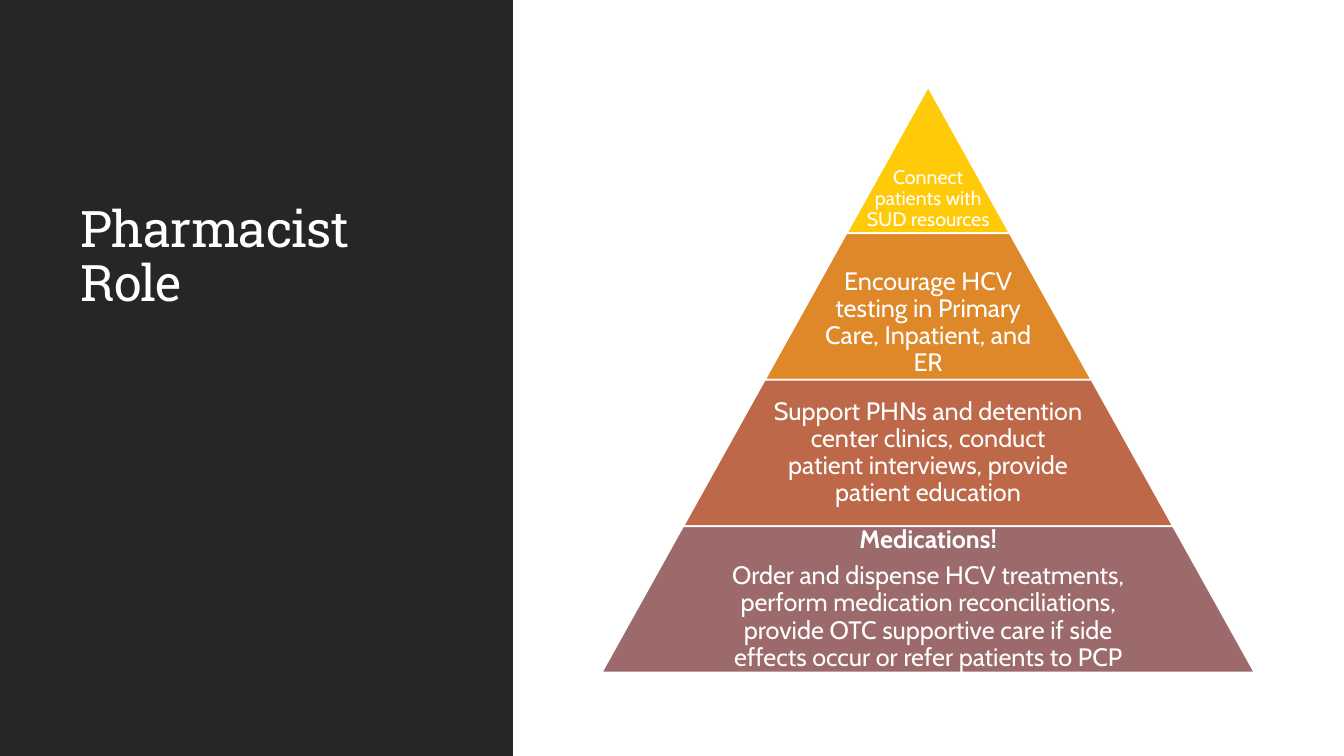
from pptx import Presentation
from pptx import util as u
from pptx.dml.color import RGBColor
from pptx.enum import shapes, text

Cm, Pt = u.Cm, u.Pt
COLORS = {
    "panel": "262626",
    "white": "FFFFFF",
    "yellow": "FFCA08",
    "orange": "DE8829",
    "rust": "BD6849",
    "mauve": "9C6A6A",
}
APEX_X, APEX_Y = 23.39, 2.19
TIER_HEIGHT, TIER_STEP = 3.69, 4.115
SLANT = 0.557
LABEL_SHARE = 0.65
BOTTOM, MIDDLE = text.MSO_ANCHOR.BOTTOM, text.MSO_ANCHOR.MIDDLE

# colour, paragraphs, text size, anchor, label share of tier width, side inset
TIERS = [
    ("yellow", ["Connect patients with SUD resources"], 14, BOTTOM, 1, 0.5),
    ("orange", ["Encourage HCV testing in Primary Care, Inpatient, and ER"],
     18, BOTTOM, LABEL_SHARE, 0.08),
    ("rust", ["Support PHNs and detention center clinics, conduct patient "
              "interviews, provide patient education"],
     18, MIDDLE, LABEL_SHARE, 0.08),
    ("mauve", ["Medications!",
               "Order and dispense HCV treatments, perform medication "
               "reconciliations, provide OTC supportive care if side effects "
               "occur or refer patients to PCP"],
     18, MIDDLE, LABEL_SHARE, 0.08),
]


def color(name):
    return RGBColor.from_string(COLORS[name])


def style_paragraph(para, font_name, size, bold=False):
    para.line_spacing = 0.9
    for span in para.runs:
        span.font.name = font_name
        span.font.size = Pt(size)
        span.font.bold = bold
        span.font.color.rgb = color("white")


def add_panel(page, width, height):
    """Place the dark side panel behind the title."""
    panel = page.shapes.add_shape(
        shapes.MSO_SHAPE.RECTANGLE, 0, 0, width, height)
    panel.shadow.inherit = False
    panel.fill.solid()
    panel.fill.fore_color.rgb = color("panel")
    panel.line.fill.background()
    page.shapes.title.element.addprevious(panel.element)


def format_title(title, wording):
    title.left, title.top = Cm(1.78), Cm(2.18)
    title.width, title.height = Cm(9.78), Cm(5.82)
    frame = title.text_frame
    frame.text = wording
    frame.word_wrap = True
    frame.auto_size = text.MSO_AUTO_SIZE.NONE
    frame.vertical_anchor = BOTTOM
    para = frame.paragraphs[0]
    para.alignment = text.PP_ALIGN.LEFT
    style_paragraph(para, "Roboto Slab", 36)
    for span in para.runs:
        span.font._element.set("spc", "-50")


def add_tier(page, top, width, fill):
    tier = page.shapes.add_shape(
        shapes.MSO_SHAPE.TRAPEZOID, Cm(APEX_X - width / 2), Cm(top),
        Cm(width), Cm(TIER_HEIGHT))
    tier.adjustments[0] = SLANT
    tier.shadow.inherit = False
    tier.fill.solid()
    tier.fill.fore_color.rgb = color(fill)
    tier.line.color.rgb = color("white")
    tier.line.width = Pt(1.25)


def add_label(page, top, width, paragraphs, size, anchor, inset):
    box = page.shapes.add_textbox(
        Cm(APEX_X - width / 2), Cm(top), Cm(width), Cm(TIER_HEIGHT))
    frame = box.text_frame
    frame.word_wrap = True
    frame.vertical_anchor = anchor
    frame.margin_left = frame.margin_right = Cm(inset)
    frame.margin_top = frame.margin_bottom = Cm(0.06)
    frame.text = "\n".join(paragraphs)
    for index, para in enumerate(frame.paragraphs):
        para.alignment = text.PP_ALIGN.CENTER
        para.space_after = Pt(size * 0.35)
        is_heading = index < len(paragraphs) - 1
        style_paragraph(para, "Cabin", size, is_heading)


def add_pyramid(page):
    for index, tier in enumerate(TIERS):
        fill, paragraphs, size, anchor, share, inset = tier
        top = APEX_Y + index * TIER_HEIGHT
        width = (index + 1) * TIER_STEP
        add_tier(page, top, width, fill)
        add_label(page, top, width * share, paragraphs, size, anchor, inset)


def main():
    deck = Presentation()
    deck.slide_width, deck.slide_height = Cm(33.87), Cm(19.05)
    page = deck.slides.add_slide(deck.slide_layouts.get_by_name("Title Only"))
    format_title(page.shapes.title, "Pharmacist Role")
    add_panel(page, Cm(12.93), deck.slide_height)
    add_pyramid(page)
    deck.save("out.pptx")


if __name__ == "__main__":
    main()
